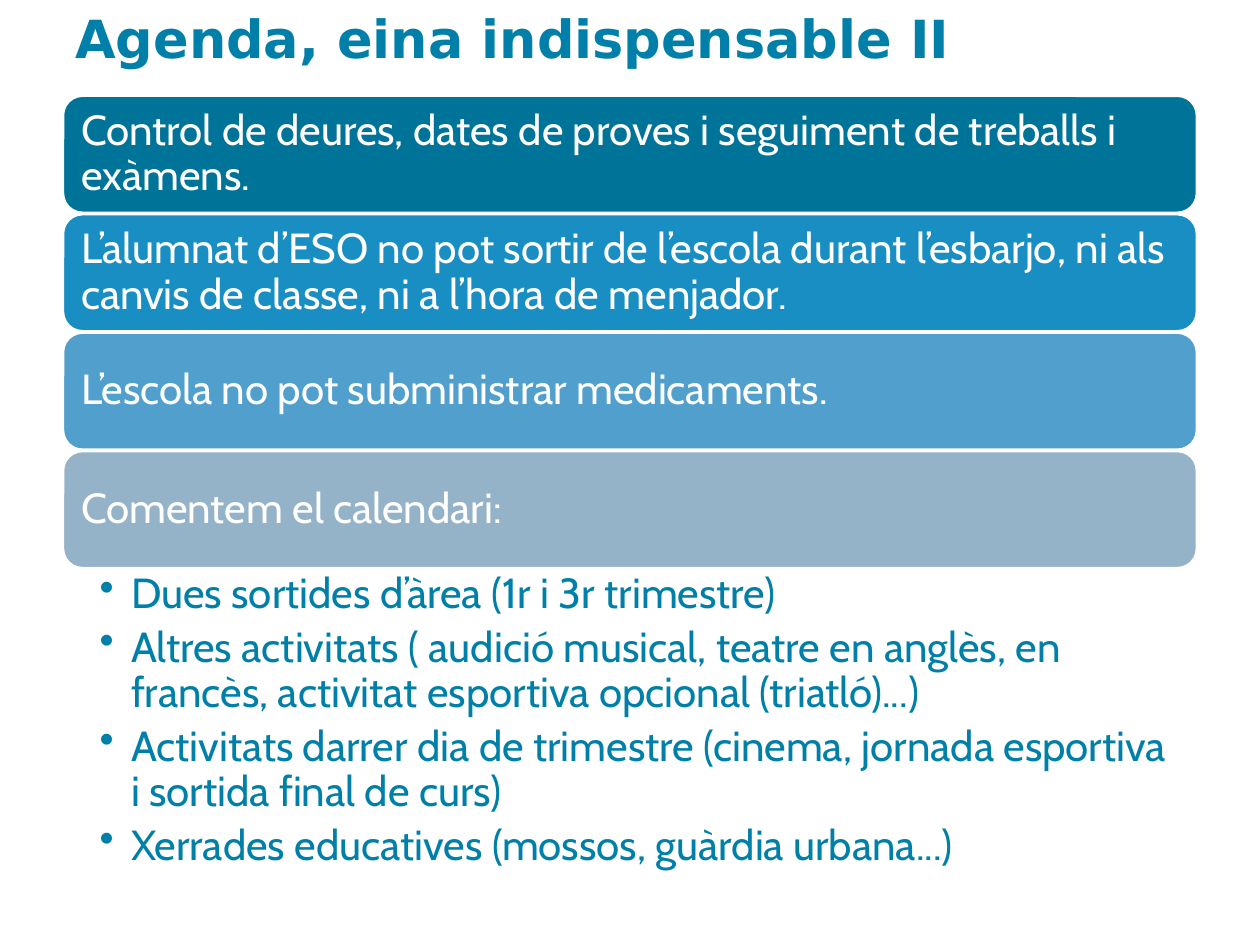
"""Build the agenda slide with four coloured bands and a bulleted list."""
from dataclasses import dataclass

from lxml import etree
from pptx import Presentation
from pptx import util as u
from pptx.dml.color import RGBColor
from pptx.enum import shapes, text
from pptx.oxml.ns import qn

COLOURS = {
    "white": "FFFFFF",
    "accent": "007FA9",
    "teal": "007399",
    "blue": "198EC2",
    "sky": "519FCC",
    "grey": "95B3C8",
}
LEFT, WIDTH = 0.5, 9
BAND_TOP, BAND_HEIGHT, BAND_PITCH = 0.76, 0.93, 0.94


@dataclass
class Band:
    wording: str
    colour: str


@dataclass
class Style:
    size: float
    face: str
    colour: str
    bold: bool = False


TITLE_STYLE = Style(30, "DejaVu Sans", "accent", True)
BAND_STYLE = Style(24, "Cabin", "white")
LIST_STYLE = Style(24, "Cabin", "accent")

BANDS = [
    Band("Control de deures, dates de proves i seguiment de treballs i exàmens.", "teal"),
    Band("L’alumnat d’ESO no pot sortir de l’escola durant l’esbarjo, ni als "
         "canvis de classe, ni a l’hora de menjador.", "blue"),
    Band("L’escola no pot subministrar medicaments.", "sky"),
    Band("Comentem el calendari:", "grey"),
]
ACTIVITIES = [
    "Dues sortides d’àrea (1r i 3r trimestre)",
    "Altres activitats ( audició musical, teatre en anglès, en francès, "
    "activitat esportiva opcional (triatló)...)",
    "Activitats darrer dia de trimestre (cinema, jornada esportiva i sortida final de curs)",
    "Xerrades educatives (mossos, guàrdia urbana...)",
]


def rgb(name: str) -> RGBColor:
    """Return the named colour."""
    return RGBColor.from_string(COLOURS[name])


def set_frame(frame, anchor, horizontal: tuple, vertical: float) -> None:
    """Set wrapping, anchor and margins of a text frame."""
    frame.word_wrap = True
    frame.vertical_anchor = anchor
    frame.margin_left, frame.margin_right = map(u.Inches, horizontal)
    frame.margin_top = frame.margin_bottom = u.Inches(vertical)


def format_paragraph(para, style: Style, spacing: float = 1.0) -> None:
    """Left-align a paragraph and style its runs."""
    para.alignment = text.PP_ALIGN.LEFT
    para.line_spacing = spacing
    for span in para.runs:
        span.font.size = u.Pt(style.size)
        span.font.name = style.face
        span.font.bold = style.bold
        span.font.color.rgb = rgb(style.colour)


def add_bullet(para) -> None:
    """Give a paragraph a hanging bullet."""
    properties = para._p.get_or_add_pPr()
    properties.set("marL", str(u.Inches(0.25)))
    properties.set("indent", str(-u.Inches(0.25)))
    etree.SubElement(properties, qn("a:buChar")).set("char", "•")


def draw_title(page, wording: str) -> None:
    """Draw the slide heading."""
    box = page.shapes.add_textbox(u.Inches(LEFT), u.Inches(0.09), u.Inches(WIDTH), u.Inches(0.51))
    set_frame(box.text_frame, text.MSO_ANCHOR.BOTTOM, (0.1, 0.1), 0.05)
    box.text_frame.text = wording
    format_paragraph(box.text_frame.paragraphs[0], TITLE_STYLE)


def draw_band(page, band: Band, top: float) -> None:
    """Draw one rounded band with its statement."""
    box = page.shapes.add_shape(
        shapes.MSO_SHAPE.ROUNDED_RECTANGLE,
        u.Inches(LEFT), u.Inches(top), u.Inches(WIDTH), u.Inches(BAND_HEIGHT))
    box.shadow.inherit = False
    box.fill.solid()
    box.fill.fore_color.rgb = rgb(band.colour)
    box.line.color.rgb = rgb("white")
    box.line.width = u.Pt(1.5)
    set_frame(box.text_frame, text.MSO_ANCHOR.MIDDLE, (0.1, 0.1), 0.1)
    box.text_frame.text = band.wording
    format_paragraph(box.text_frame.paragraphs[0], BAND_STYLE, 0.9)


def draw_list(page, items: list[str], top: float) -> None:
    """Draw the bulleted activities."""
    box = page.shapes.add_textbox(u.Inches(LEFT), u.Inches(top), u.Inches(WIDTH), u.Inches(2.22))
    set_frame(box.text_frame, text.MSO_ANCHOR.TOP, (0.29, 0.19), 0.03)
    box.text_frame.text = "\n".join(items)
    for para in box.text_frame.paragraphs:
        para.level = 1
        add_bullet(para)
        para.space_after = u.Pt(4.8)
        format_paragraph(para, LIST_STYLE, 0.9)


def main() -> None:
    """Build and save the deck."""
    deck = Presentation()
    deck.slide_width, deck.slide_height = u.Inches(10), u.Inches(7.5)
    page = deck.slides.add_slide(deck.slide_layouts[6])
    for index, band in enumerate(BANDS):
        draw_band(page, band, BAND_TOP + index * BAND_PITCH)
    draw_list(page, ACTIVITIES, BAND_TOP + 3 * BAND_PITCH + BAND_HEIGHT)
    draw_title(page, "Agenda, eina indispensable II")
    deck.save("out.pptx")


if __name__ == "__main__":
    main()
